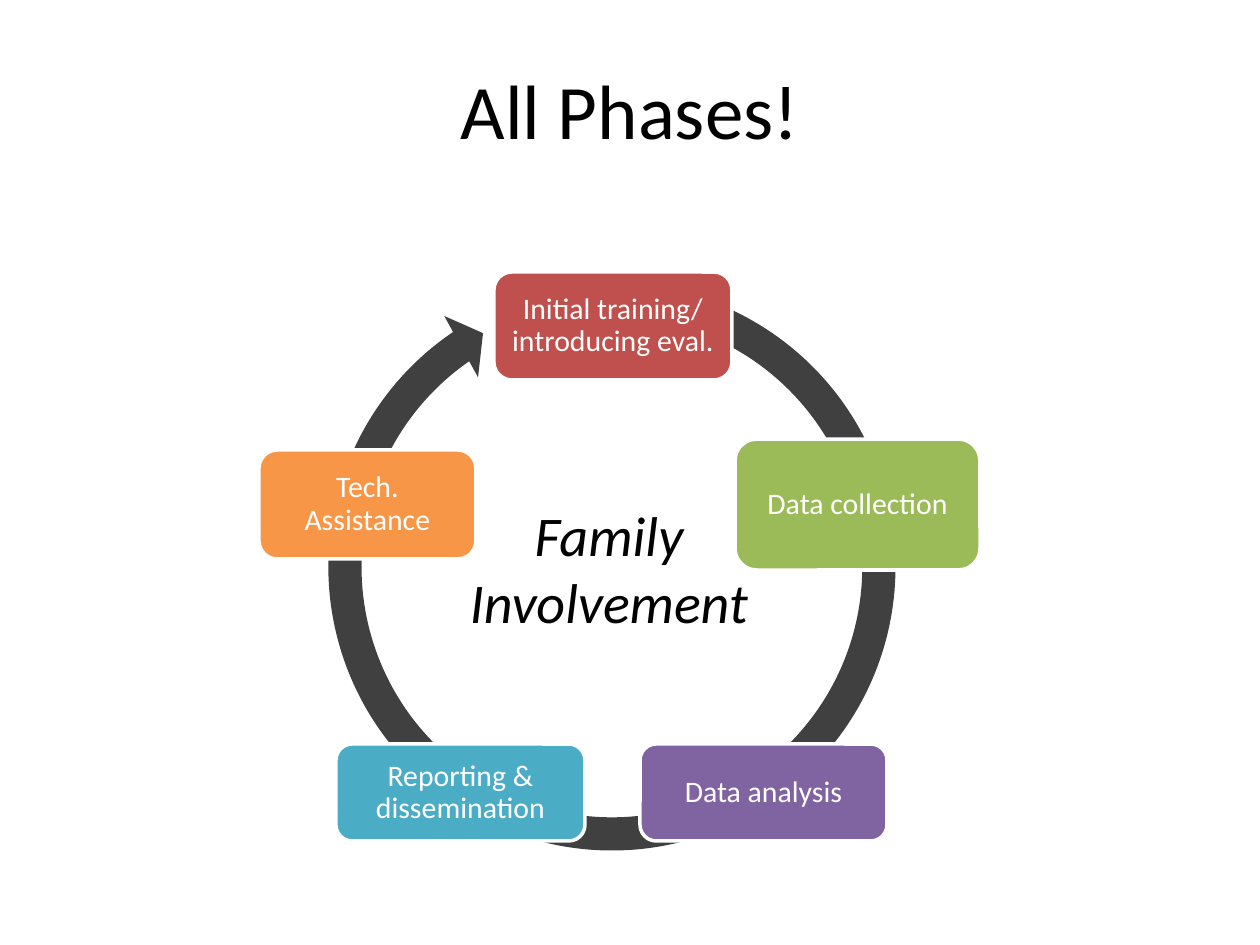
"""Build the "All Phases!" slide: five phases on a cycle around family involvement."""
import pptx
import pptx.dml.color
import pptx.enum.shapes
import pptx.enum.text
import pptx.util

PX = 914400 / 126
BLACK = pptx.dml.color.RGBColor(0x00, 0x00, 0x00)
WHITE = pptx.dml.color.RGBColor(0xFF, 0xFF, 0xFF)
CHARCOAL = pptx.dml.color.RGBColor(0x40, 0x40, 0x40)
RED = pptx.dml.color.RGBColor(0xC0, 0x50, 0x4D)
GREEN = pptx.dml.color.RGBColor(0x9B, 0xBB, 0x59)
PURPLE = pptx.dml.color.RGBColor(0x80, 0x64, 0xA2)
TEAL = pptx.dml.color.RGBColor(0x4B, 0xAC, 0xC6)
ORANGE = pptx.dml.color.RGBColor(0xF7, 0x96, 0x46)
SHAPE = pptx.enum.shapes.MSO_SHAPE
ANCHOR = pptx.enum.text.MSO_ANCHOR


def emu(*lengths):
    return [pptx.util.Emu(round(length * PX)) for length in lengths]


def write(holder, text, size, color, anchor, italic=False):
    frame = holder.text_frame
    frame.word_wrap = True
    frame.vertical_anchor = anchor
    frame.text = text
    paragraph = frame.paragraphs[0]
    paragraph.alignment = pptx.enum.text.PP_ALIGN.CENTER
    font = paragraph.runs[0].font
    font.name = "Calibri"
    font.size = pptx.util.Pt(size)
    font.italic = italic
    font.color.rgb = color
    return frame


presentation = pptx.Presentation()
presentation.slide_width, presentation.slide_height = emu(1260, 945)
slide = presentation.slides.add_slide(presentation.slide_layouts[6])

title = slide.shapes.add_textbox(*emu(63, 38, 1134, 141))
write(title, "All Phases!", 44, BLACK, ANCHOR.MIDDLE)

cycle = slide.shapes.add_shape(SHAPE.CIRCULAR_ARROW, *emu(310, 265, 604, 604))
for index, value in enumerate((0.055, 3.307, 141.368, 171.701, 0.058)):
    cycle.adjustments[index] = value
cycle.shadow.inherit = False
cycle.fill.solid()
cycle.fill.fore_color.rgb = CHARCOAL
cycle.line.fill.background()

phases = [
    ("Initial training/ introducing eval.", RED, 494, 272, 238, 108),
    ("Data collection", GREEN, 735, 439, 245, 131),
    ("Data analysis", PURPLE, 640, 744, 247, 97),
    ("Reporting & dissemination", TEAL, 336, 744, 249, 97),
    ("Tech. Assistance", ORANGE, 259, 450, 217, 109),
]
for label, color, *box in phases:
    phase = slide.shapes.add_shape(SHAPE.ROUNDED_RECTANGLE, *emu(*box))
    phase.shadow.inherit = False
    phase.fill.solid()
    phase.fill.fore_color.rgb = color
    phase.line.color.rgb = WHITE
    phase.line.width = pptx.util.Pt(2)
    frame = write(phase, label, 17, WHITE, ANCHOR.MIDDLE)
    frame.margin_left, frame.margin_top, frame.margin_right, frame.margin_bottom = emu(9, 9, 9, 9)
    frame.paragraphs[0].line_spacing = 0.9

center = slide.shapes.add_textbox(*emu(441, 494, 336, 149))
write(center, "Family Involvement", 32, BLACK, ANCHOR.TOP, italic=True)

presentation.save("out.pptx")
